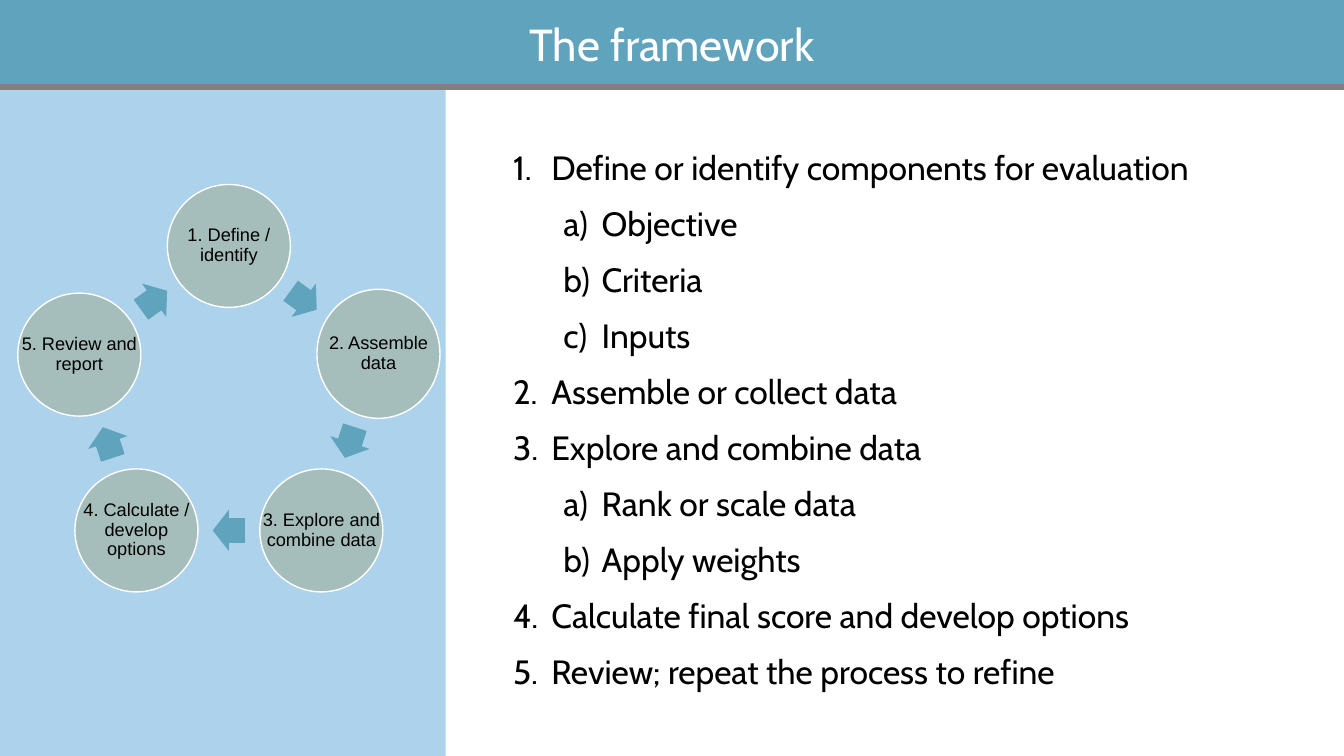
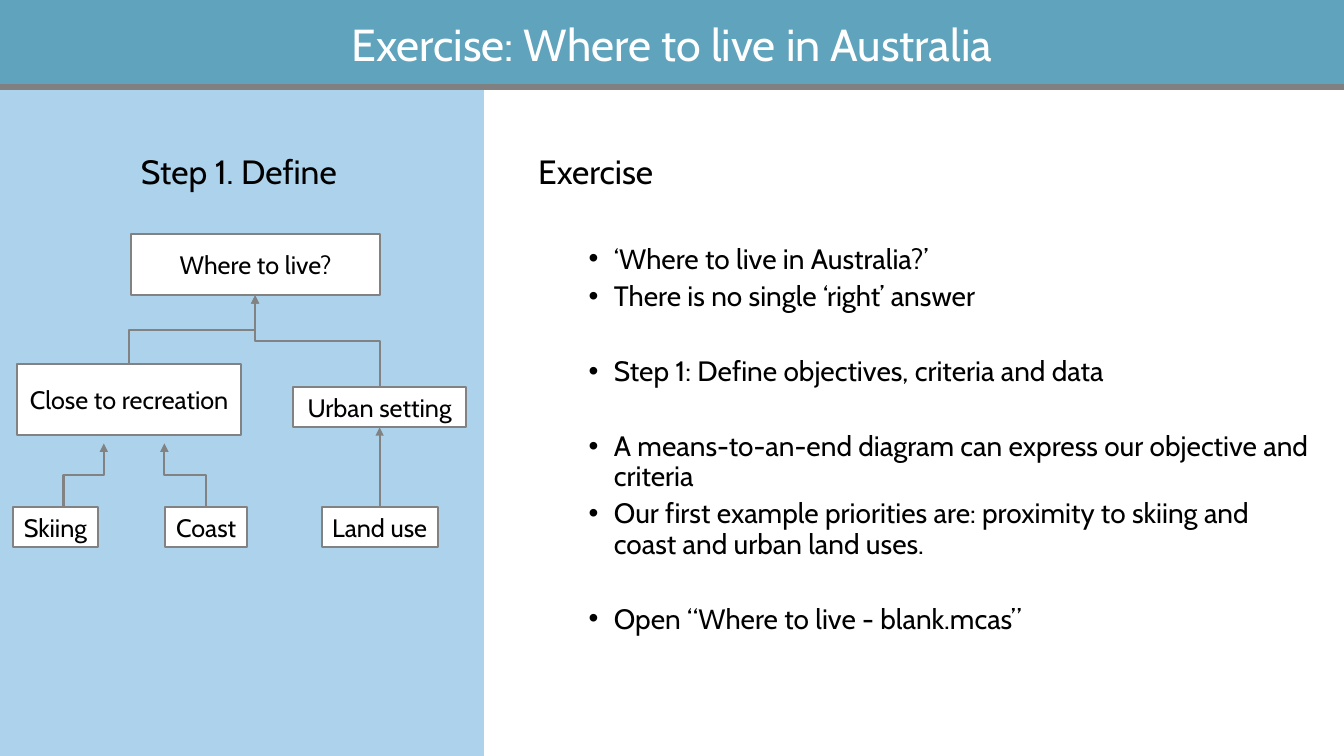
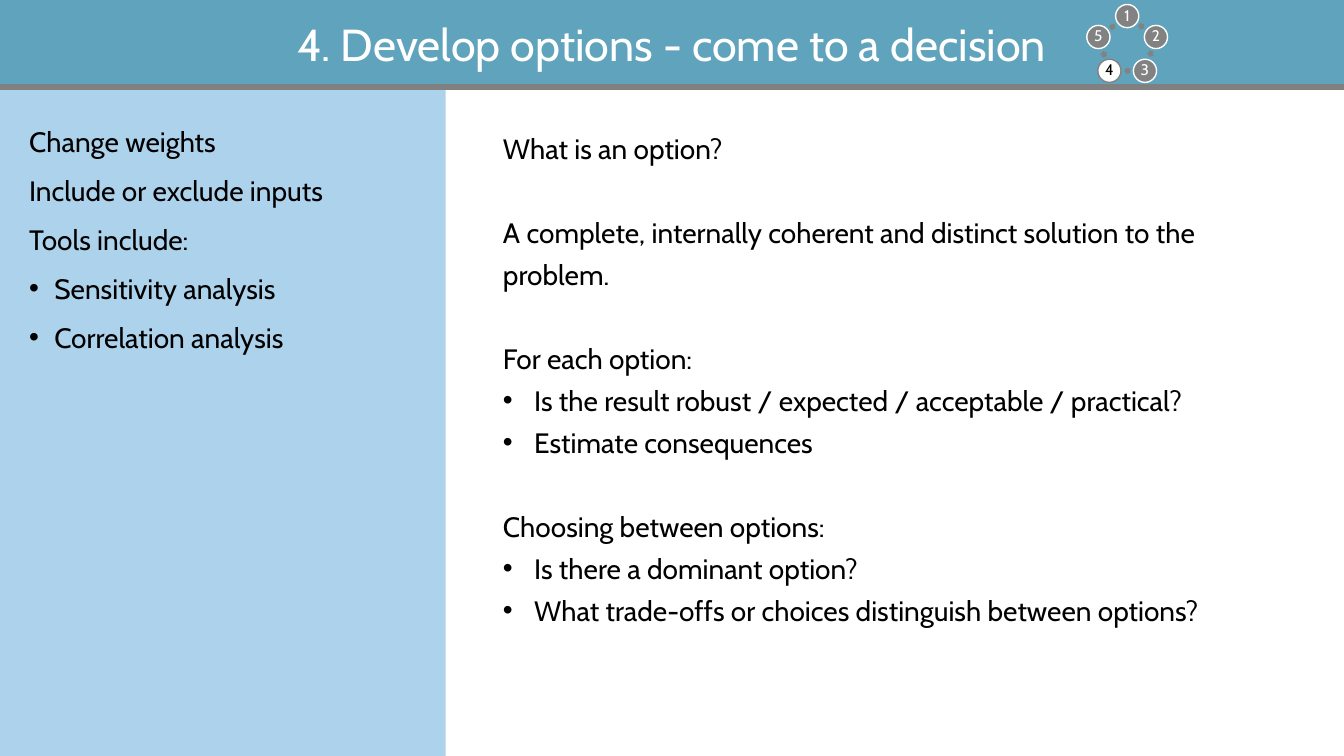
import math

import pptx
import pptx.dml.color
import pptx.enum.shapes
import pptx.enum.text
import pptx.oxml.ns
import pptx.util
from lxml import etree

Inches = pptx.util.Inches
Pt = pptx.util.Pt
Shape = pptx.enum.shapes.MSO_SHAPE
Connector = pptx.enum.shapes.MSO_CONNECTOR
Align = pptx.enum.text.PP_ALIGN
Anchor = pptx.enum.text.MSO_ANCHOR
qn = pptx.oxml.ns.qn

# List styles: bullet tag, its attributes, level, left indent in inches, hanging indent
NUMBER = ("a:buAutoNum", {"type": "arabicPeriod"}, 0, 0.38, 0.38)
LETTER = ("a:buAutoNum", {"type": "alphaLcParenR"}, 1, 0.88, 0.38)
DOT = ("a:buChar", {"char": "•"}, 0, 0.31, 0.31)
NARROW_DOT = ("a:buChar", {"char": "•"}, 0, 0.25, 0.25)
INDENTED_DOT = ("a:buChar", {"char": "•"}, 1, 0.75, 0.25)


def color(value):
    return pptx.dml.color.RGBColor.from_string(value)


class Deck:
    FONT = "Cabin"
    TEAL, SKY, SAGE = "60A3BC", "ADD2EB", "A5BEBB"
    GRAY, RULE = "828282", "808080"
    WHITE, BLACK = "FFFFFF", "000000"
    WIDTH, HEIGHT, BAND = 13.33, 7.5, 0.87

    def __init__(self):
        self.presentation = pptx.Presentation()
        self.presentation.slide_width = Inches(self.WIDTH)
        self.presentation.slide_height = Inches(self.HEIGHT)
        self.slide = None

    def new_slide(self, title, panel_width):
        """Start a slide with its side panel, title band and rule."""
        self.slide = self.presentation.slides.add_slide(self.presentation.slide_layouts[6])
        self.shape(Shape.RECTANGLE, 0, 0, panel_width, self.HEIGHT, self.SKY)
        band = self.shape(Shape.RECTANGLE, 0, 0, self.WIDTH, self.BAND, self.TEAL)
        self.label(band, title, 32, self.WHITE)
        self.line(Connector.STRAIGHT, (0, 0.86), (self.WIDTH, 0.86), self.RULE, 4.5)

    def shape(self, kind, left, top, width, height, fill, line=None, line_width=1):
        shape = self.slide.shapes.add_shape(
            kind, Inches(left), Inches(top), Inches(width), Inches(height))
        shape.shadow.inherit = False
        shape.fill.solid()
        shape.fill.fore_color.rgb = color(fill)
        if line:
            shape.line.color.rgb = color(line)
            shape.line.width = Pt(line_width)
        else:
            shape.line.fill.background()
        return shape

    def style(self, paragraph, size, ink, font=None, spacing=None):
        if spacing:
            paragraph.line_spacing = spacing
        paragraph.font.name = font or self.FONT
        paragraph.font.size = Pt(size)
        paragraph.font.color.rgb = color(ink)

    def label(self, shape, text, size, ink, font=None, spacing=None):
        """Centre text in a shape, with no automatic wrapping."""
        frame = shape.text_frame
        frame.word_wrap = False
        frame.vertical_anchor = Anchor.MIDDLE
        paragraph = frame.paragraphs[0]
        paragraph.text = text
        paragraph.alignment = Align.CENTER
        self.style(paragraph, size, ink, font, spacing)

    def text(self, left, top, width, height, items, size, spacing):
        """Add a text box; each item is (text, list style, space before)."""
        box = self.slide.shapes.add_textbox(
            Inches(left), Inches(top), Inches(width), Inches(height))
        frame = box.text_frame
        frame.word_wrap = True
        for index, (text, bullet, before) in enumerate(items):
            paragraph = frame.add_paragraph() if index else frame.paragraphs[0]
            paragraph.text = text
            if bullet:
                self.bullet(paragraph, bullet)
            if before:
                paragraph.space_before = Pt(before)
            self.style(paragraph, size, self.BLACK, spacing=spacing)

    def bullet(self, paragraph, style):
        tag, attributes, level, left, hanging = style
        paragraph.level = level
        properties = paragraph._p.get_or_add_pPr()
        properties.set("marL", str(Inches(left)))
        properties.set("indent", str(-Inches(hanging)))
        if tag == "a:buChar":
            etree.SubElement(properties, qn("a:buFont"), typeface="Arial")
        etree.SubElement(properties, qn(tag), **attributes)

    def line(self, kind, start, end, ink, width, arrow=False):
        connector = self.slide.shapes.add_connector(
            kind, *(Inches(value) for value in (*start, *end)))
        connector.line.color.rgb = color(ink)
        connector.line.width = Pt(width)
        properties = connector.element.spPr
        if arrow:
            etree.SubElement(properties.find(qn("a:ln")), qn("a:tailEnd"), type="triangle")
        etree.SubElement(properties, qn("a:effectLst"))
        return connector

    def elbow_up(self, start, end):
        """Draw an elbow arrow that leaves and arrives vertically."""
        rise, run = start[1] - end[1], end[0] - start[0]
        center_x, center_y = (start[0] + end[0]) / 2, (start[1] + end[1]) / 2
        sign, degrees = (1, 270) if run < 0 else (-1, 90)
        half_x, half_y = sign * rise / 2, sign * run / 2
        connector = self.line(
            Connector.ELBOW, (center_x - half_x, center_y - half_y),
            (center_x + half_x, center_y + half_y), self.GRAY, 1.5, arrow=True)
        connector.element.spPr.find(qn("a:xfrm")).set("rot", str(degrees * 60000))

    def box(self, text, left, top, width, height):
        box = self.shape(Shape.RECTANGLE, left, top, width, height, "FEFFFE", self.GRAY, 1.5)
        self.label(box, text, 18, self.BLACK)
        return box

    def cycle(self, labels, center, radius, diameter, arrow_size, fill, arrow_fill,
              size, ink, font=None, current=None):
        """Place circles evenly on a ring, with an arrow between neighbours."""
        step = 360 / len(labels)
        circles = []

        def corner(angle, distance, width, height):
            turn = math.radians(angle)
            return (center[0] + distance * math.sin(turn) - width / 2,
                    center[1] - distance * math.cos(turn) - height / 2)

        for index, text in enumerate(labels):
            active = text == current
            left, top = corner(index * step, radius, diameter, diameter)
            circle = self.shape(
                Shape.OVAL, left, top, diameter, diameter,
                self.WHITE if active else fill, fill if active else self.WHITE)
            self.label(circle, text, size, self.BLACK if active else ink, font, 0.9)
            circles.append(circle)

            angle = (index + 0.5) * step
            middle = radius * math.cos(math.radians(step / 2))
            arrow = self.shape(
                Shape.RIGHT_ARROW, *corner(angle, middle, *arrow_size), *arrow_size, arrow_fill)
            arrow.adjustments[0] = 0.6
            arrow.rotation = angle
        return circles

    def framework(self):
        self.new_slide("The framework", 4.42)
        circles = self.cycle(
            ["1. Define /\videntify", "2. Assemble\vdata", "3. Explore and\vcombine data",
             "4. Calculate /\vdevelop\voptions", "5. Review and\vreport"],
            (2.27, 4), 1.56, 1.22, (0.32, 0.41), self.SAGE, self.TEAL, 13, self.BLACK, "Arial")
        # The second circle is slightly taller
        circles[1].top, circles[1].height = Inches(2.87), Inches(1.28)
        self.text(4.99, 1.25, 7.1, 5.65, [
            ("Define or identify components for evaluation", NUMBER, 0),
            ("Objective", LETTER, 0),
            ("Criteria", LETTER, 0),
            ("Inputs", LETTER, 0),
            ("Assemble or collect data", NUMBER, 0),
            ("Explore and combine data", NUMBER, 0),
            ("Rank or scale data", LETTER, 0),
            ("Apply weights", LETTER, 0),
            ("Calculate final score and develop options", NUMBER, 0),
            ("Review; repeat the process to refine", NUMBER, 0),
        ], 24, Pt(40))

    def exercise(self):
        self.new_slide("Exercise: Where to live in Australia", 4.8)
        # Headings and steps
        self.text(1.3, 1.49, 2.51, 0.59, [("Step 1. Define", None, 0)], 24, 0.9)
        self.text(5.24, 1.49, 7.87, 0.59, [("Exercise", None, 0)], 24, 0.9)
        self.text(5.24, 2.38, 7.87, 4, [
            ("‘Where to live in Australia?’", INDENTED_DOT, 0),
            ("There is no single ‘right’ answer", INDENTED_DOT, 5),
            ("Step 1: Define objectives, criteria and data", INDENTED_DOT, 32),
            ("A means-to-an-end diagram can express our objective and criteria",
             INDENTED_DOT, 32),
            ("Our first example priorities are: proximity to skiing and coast "
             "and urban land uses.", INDENTED_DOT, 5),
            ("Open “Where to live - blank.mcas”", INDENTED_DOT, 32),
        ], 20, 0.9)
        # Means-to-an-end diagram
        self.box("Where to live?", 1.3, 2.32, 2.47, 0.61)
        self.box("Close to recreation", 0.17, 3.61, 2.22, 0.71)
        urban = self.box("Urban setting", 2.91, 3.84, 1.71, 0.4)
        self.box("Skiing", 0.13, 5.03, 0.84, 0.4)
        self.box("Coast", 1.64, 5.03, 0.81, 0.4)
        land_use = self.box("Land use", 3.19, 5.03, 1.15, 0.4)
        for start, end in [((0.63, 5.03), (1.03, 4.4)), ((2.04, 5.03), (1.63, 4.4)),
                           ((1.28, 3.61), (2.53, 2.93)), ((3.77, 3.84), (2.53, 2.93))]:
            self.elbow_up(start, end)
        arrow = self.line(
            Connector.STRAIGHT, (3.77, 5.03), (3.77, 4.24), self.GRAY, 1.5, arrow=True)
        arrow.begin_connect(land_use, 0)
        arrow.end_connect(urban, 2)

    def options(self):
        self.new_slide("4. Develop options - come to a decision", 4.42)
        self.cycle("12345", (11.18, 0.46), 0.3, 0.23, (0.06, 0.08),
                   self.GRAY, self.GRAY, 11, self.WHITE, current="4")
        self.text(0.19, 1.17, 4.21, 6.02, [
            ("Change weights", None, 0),
            ("Include or exclude inputs", None, 10),
            ("Tools include:", None, 10),
            ("Sensitivity analysis", NARROW_DOT, 10),
            ("Correlation analysis", NARROW_DOT, 10),
        ], 20, Pt(25))
        self.text(4.89, 1.17, 8.18, 5.57, [
            ("What is an option?", None, 0),
            ("A complete, internally coherent and distinct solution to the problem.", None, 30),
            ("For each option:", None, 30),
            ("Is the result robust / expected / acceptable / practical?", DOT, 0),
            ("Estimate consequences", DOT, 0),
            ("Choosing between options:", None, 30),
            ("Is there a dominant option?", DOT, 0),
            ("What trade-offs or choices distinguish between options?", DOT, 0),
        ], 20, Pt(30))


def main():
    deck = Deck()
    deck.framework()
    deck.exercise()
    deck.options()
    deck.presentation.save("out.pptx")


if __name__ == "__main__":
    main()
